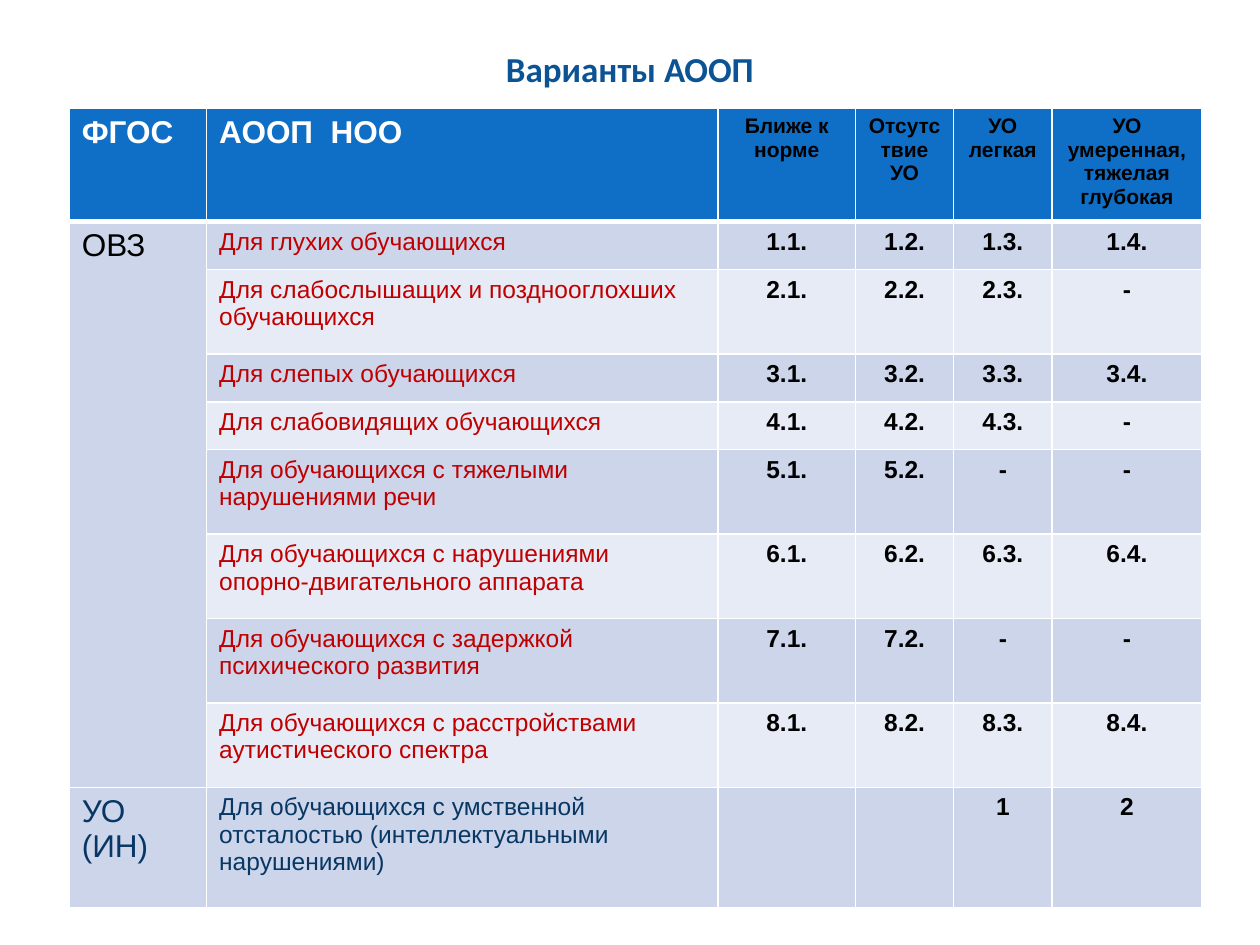
from lxml.etree import SubElement
from pptx import Presentation
from pptx.dml.color import RGBColor
from pptx.enum.text import MSO_ANCHOR as Anchor, PP_ALIGN as Align
from pptx.oxml.ns import qn
from pptx.util import Inches, Pt

WHITE = RGBColor(0xFF, 0xFF, 0xFF)
BLACK = RGBColor(0x00, 0x00, 0x00)
RED = RGBColor(0xC0, 0x00, 0x00)
NAVY = RGBColor(0x08, 0x37, 0x63)
TITLE_BLUE = RGBColor(0x0B, 0x53, 0x94)
HEADER_BLUE = RGBColor(0x0F, 0x6F, 0xC6)
BANDS = RGBColor(0xE7, 0xEB, 0xF5), RGBColor(0xCC, 0xD5, 0xEA)

TITLE = "Варианты АООП"
HEADER = ["ФГОС", "АООП  НОО", "Ближе к норме", "Отсутствие УО",
          "УО легкая", "УО умеренная, тяжелая глубокая"]
PROGRAMS = [
    (1, "ОВЗ", "Для глухих обучающихся", "1.1.", "1.2.", "1.3.", "1.4."),
    (2, "", "Для слабослышащих и позднооглохших обучающихся", "2.1.", "2.2.", "2.3.", "-"),
    (1, "", "Для слепых обучающихся", "3.1.", "3.2.", "3.3.", "3.4."),
    (1, "", "Для слабовидящих обучающихся", "4.1.", "4.2.", "4.3.", "-"),
    (2, "", "Для обучающихся с тяжелыми нарушениями речи", "5.1.", "5.2.", "-", "-"),
    (2, "", "Для обучающихся с нарушениями опорно-двигательного аппарата",
     "6.1.", "6.2.", "6.3.", "6.4."),
    (2, "", "Для обучающихся с задержкой психического развития", "7.1.", "7.2.", "-", "-"),
    (2, "", "Для обучающихся с расстройствами аутистического спектра",
     "8.1.", "8.2.", "8.3.", "8.4."),
    (3, "УО (ИН)", "Для обучающихся с умственной отсталостью (интеллектуальными нарушениями)",
     "", "", "1", "2"),
]
COLUMN_WIDTHS = [1.09, 4.06, 1.09, 0.78, 0.78, 1.19]
HEADER_HEIGHT, ROW_PADDING, LINE_HEIGHT = 0.9, 0.09, 0.29
LAST_ROW = len(PROGRAMS)


def write(frame, text, align, color, **formats):
    paragraph = frame.paragraphs[0]
    paragraph.alignment = align
    run = paragraph.add_run()
    run.text = text
    run.font.color.rgb = color
    for name, value in formats.items():
        setattr(run.font, name, value)


def add_borders(cell, top, bottom):
    properties = cell._tc.get_or_add_tcPr()
    widths = {"a:lnL": 1, "a:lnR": 1, "a:lnT": top, "a:lnB": bottom}
    for position, (tag, width) in enumerate(widths.items()):
        line = SubElement(properties, qn(tag), w=str(Pt(width)))
        fill = SubElement(line, qn("a:solidFill"))
        SubElement(fill, qn("a:srgbClr"), val=str(WHITE))
        properties.insert(position, line)


def text_format(row, column):
    if row == 0:
        return (Align.LEFT, WHITE, 18, True) if column < 2 else (Align.CENTER, BLACK, 12, True)
    if column > 1:
        return Align.CENTER, BLACK, 14, True
    size = 18 if column == 0 else 14
    color = NAVY if row == LAST_ROW else (BLACK, RED)[column]
    return Align.LEFT, color, size, False


def add_title(slide):
    title = slide.shapes.title
    box = {"left": 0.5, "top": 0.3, "width": 9, "height": 0.48}
    for name, value in box.items():
        setattr(title, name, Inches(value))
    title.text_frame.vertical_anchor = Anchor.MIDDLE
    write(title.text_frame, TITLE, Align.CENTER, TITLE_BLUE,
          name="Calibri", size=Pt(20), bold=True)


def add_program_table(slide):
    rows = [HEADER] + [program[1:] for program in PROGRAMS]
    heights = [HEADER_HEIGHT] + [ROW_PADDING + LINE_HEIGHT * program[0] for program in PROGRAMS]
    table = slide.shapes.add_table(
        len(rows), len(HEADER), Inches(0.55), Inches(0.86),
        Inches(sum(COLUMN_WIDTHS)), Inches(sum(heights))).table
    for column, width in zip(table.columns, COLUMN_WIDTHS):
        column.width = Inches(width)
    for row, height in zip(table.rows, heights):
        row.height = Inches(height)
    for r, texts in enumerate(rows):
        for c, text in enumerate(texts):
            cell = table.cell(r, c)
            cell.fill.solid()
            banded = BANDS[1] if c == 0 else BANDS[r % 2]
            cell.fill.fore_color.rgb = banded if r else HEADER_BLUE
            add_borders(cell, top=3 if r == 1 else 1, bottom=1 if r else 3)
            if text:
                align, color, size, bold = text_format(r, c)
                write(cell.text_frame, text, align, color,
                      name="Arial", size=Pt(size), bold=bold)
    table.cell(1, 0).merge(table.cell(LAST_ROW - 1, 0))


def main():
    presentation = Presentation()
    presentation.slide_width, presentation.slide_height = Inches(10), Inches(7.5)
    slide = presentation.slides.add_slide(presentation.slide_layouts[5])
    add_title(slide)
    add_program_table(slide)
    presentation.save("out.pptx")


if __name__ == "__main__":
    main()
